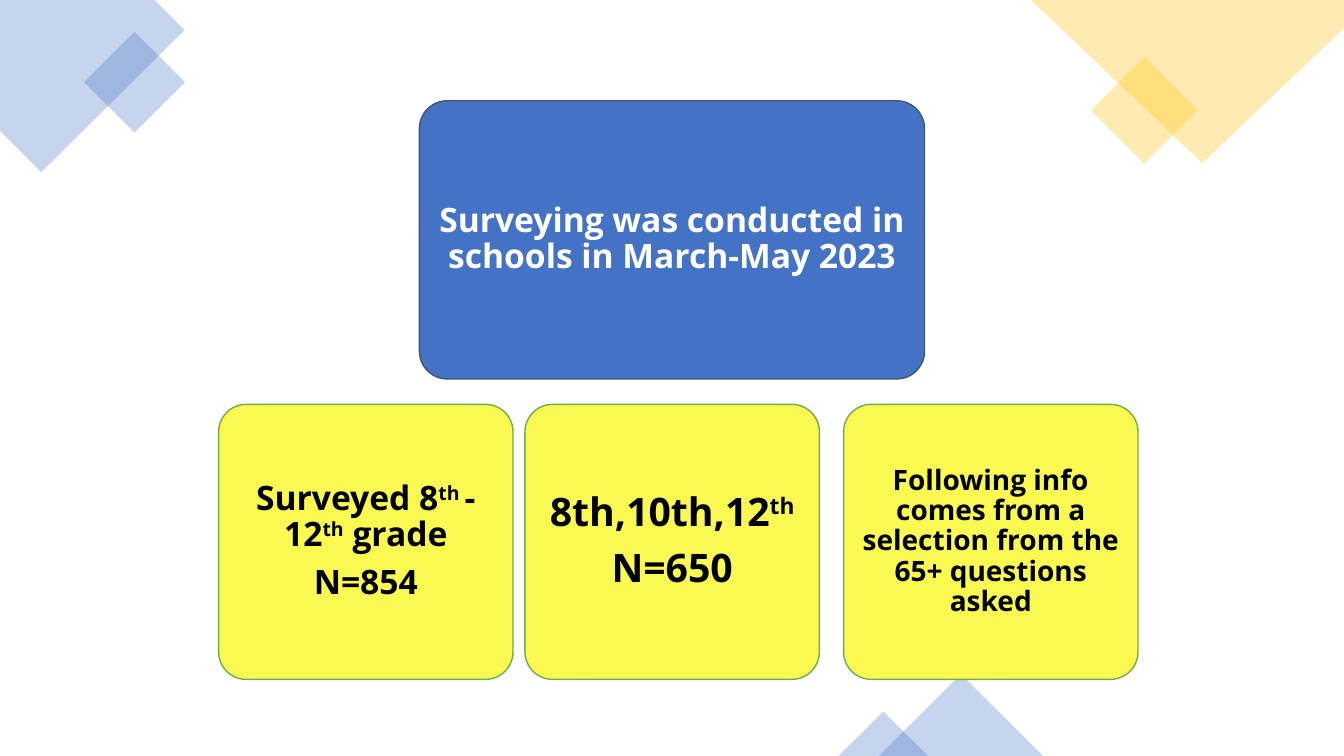
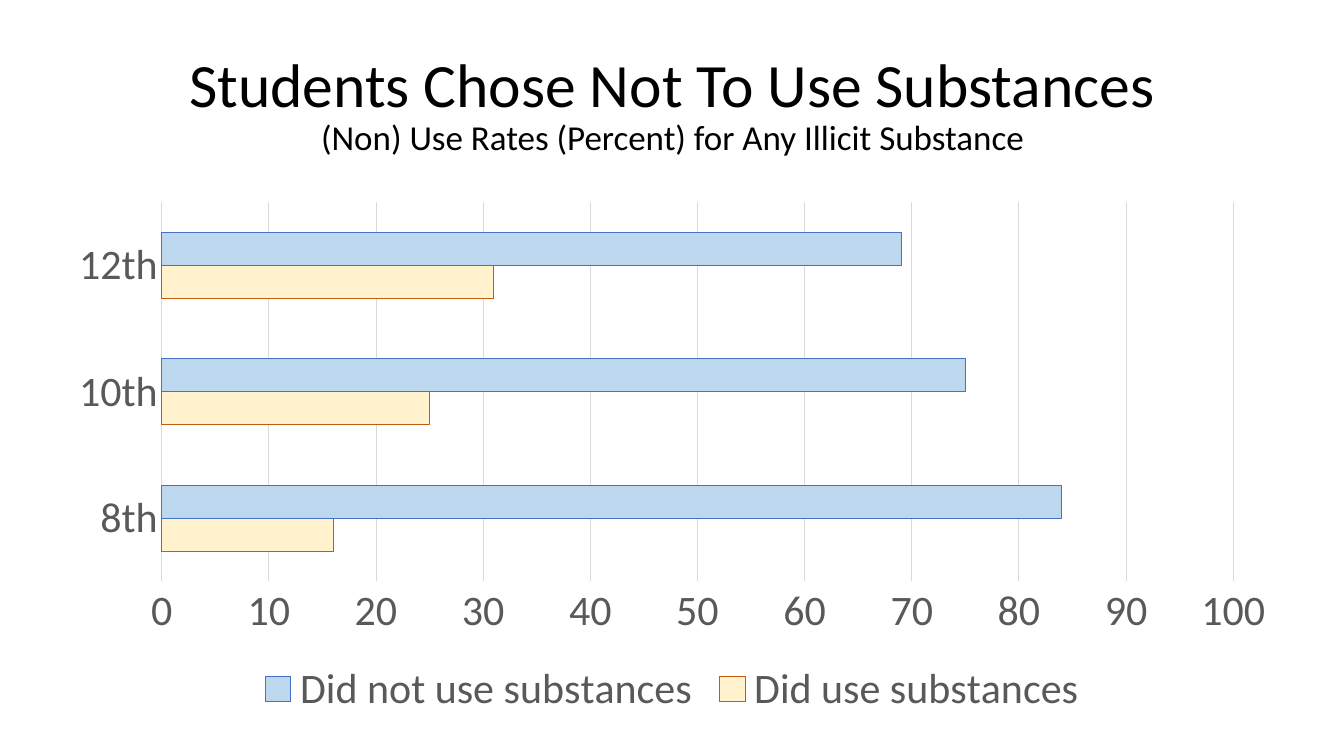
"""Build two slides on a school substance-use survey."""
import lxml.etree
import pptx
import pptx.chart.data
import pptx.dml.color
import pptx.enum.chart
import pptx.enum.shapes
import pptx.enum.text
import pptx.oxml.ns
import pptx.util

Cm = pptx.util.Cm
Pt = pptx.util.Pt
SHAPE = pptx.enum.shapes.MSO_SHAPE
BLUE = "4472C4"
GOLD = "FFC000"
YELLOW = "F9F951"
BLACK = "000000"
WHITE = "FFFFFF"
GREY_TEXT = "595959"
GREY_LINE = "D9D9D9"


def color(hex_string):
    return pptx.dml.color.RGBColor.from_string(hex_string)


def write(paragraph, text, size, font="Calibri", ink=BLACK, bold=False, space_after=0):
    paragraph.alignment = pptx.enum.text.PP_ALIGN.CENTER
    paragraph.line_spacing = 0.9
    paragraph.space_after = Pt(space_after)
    for index, piece in enumerate(text.split("^")):
        run = paragraph.add_run()
        run.text = piece
        run.font.name = font
        run.font.size = Pt(size)
        run.font.bold = bold
        run.font.color.rgb = color(ink)
        if index % 2:
            run._r.get_or_add_rPr().set("baseline", "30000")


presentation = pptx.Presentation()
presentation.slide_width = Cm(33.87)
presentation.slide_height = Cm(19.05)

slide = presentation.slides.add_slide(presentation.slide_layouts[6])
decorations = []
corners = [
    (BLUE, [(3.89, 0), (0, 0), (0, 3.3), (1.04, 4.34), (4.65, 0.76)]),
    (GOLD, [(33.87, 0), (25.98, 0), (30.3, 4.11), (33.87, 0.71)]),
]
for fill, points in corners:
    start, *rest = [(Cm(x), Cm(y)) for x, y in points]
    builder = slide.shapes.build_freeform(*start)
    builder.add_line_segments(rest, close=True)
    decorations.append((builder.convert_to_shape(), fill))

accents = [
    (SHAPE.RECTANGLE, BLUE, 315, 2.49, 1.17, 1.8, 1.8),
    (SHAPE.RECTANGLE, GOLD, 315, 27.89, 1.83, 1.9, 1.9),
    (SHAPE.ISOSCELES_TRIANGLE, BLUE, 0, 22.15, 16.99, 4.14, 2.06),
    (SHAPE.ISOSCELES_TRIANGLE, BLUE, 0, 21.13, 17.93, 2.26, 1.12),
]
for kind, fill, rotation, *box in accents:
    shape = slide.shapes.add_shape(kind, *map(Cm, box))
    shape.rotation = rotation
    decorations.append((shape, fill))

for shape, fill in decorations:
    shape.shadow.inherit = False
    shape.line.fill.background()
    shape.fill.solid()
    shape.fill.fore_color.rgb = color(fill)
    fill_color = shape._element.spPr.find(".//" + pptx.oxml.ns.qn("a:srgbClr"))
    lxml.etree.SubElement(fill_color, pptx.oxml.ns.qn("a:alpha"), val="30000")

small_card = (10.19, 7.42, 6.93)
cards = [
    ((10.57, 2.54, 12.73, 7.01), BLUE, "44546A", WHITE, 24,
     ["Surveying was conducted in schools in March-May 2023"]),
    ((5.51, *small_card), YELLOW, "70AD47", BLACK, 24,
     ["Surveyed 8^th ^- 12^th^ grade", "N=854"]),
    ((13.23, *small_card), YELLOW, "70AD47", BLACK, 28,
     ["8th,10th,12^th", "N=650"]),
    ((21.26, *small_card), YELLOW, "70AD47", BLACK, 20,
     ["Following info comes from a selection from the 65+ questions asked"]),
]
for box, fill, outline, ink, size, lines in cards:
    card = slide.shapes.add_shape(SHAPE.ROUNDED_RECTANGLE, *map(Cm, box))
    card.adjustments[0] = 0.1
    card.shadow.inherit = False
    card.fill.solid()
    card.fill.fore_color.rgb = color(fill)
    card.line.color.rgb = color(outline)
    card.line.width = Pt(1)
    frame = card.text_frame
    frame.word_wrap = True
    frame.vertical_anchor = pptx.enum.text.MSO_ANCHOR.MIDDLE
    inset = Pt(size * 0.3)
    frame.margin_left = frame.margin_right = inset
    frame.margin_top = frame.margin_bottom = inset
    for index, line in enumerate(lines):
        paragraph = frame.add_paragraph() if index else frame.paragraphs[0]
        write(paragraph, line, size, font="Open Sans", ink=ink, bold=True,
              space_after=size * 0.35)

slide = presentation.slides.add_slide(presentation.slide_layouts[5])
title = slide.shapes.title
title.left, title.top, title.width, title.height = map(Cm, (2.34, 0.84, 29.21, 3.68))
title.text_frame.word_wrap = True
title.text_frame.vertical_anchor = pptx.enum.text.MSO_ANCHOR.MIDDLE
paragraph = title.text_frame.paragraphs[0]
write(paragraph, "Students Chose Not To Use Substances", 44)
paragraph.add_line_break()
write(paragraph, "(Non) Use Rates (Percent) for Any Illicit Substance", 25)

series_rows = [
    ("Did use substances", (16, 25, 31), "FFF2CC", "C55A11"),
    ("Did not use substances", (84, 75, 69), "BDD7EE", BLUE),
]
chart_data = pptx.chart.data.CategoryChartData()
chart_data.categories = ["8th", "10th", "12th"]
for name, values, fill, outline in series_rows:
    chart_data.add_series(name, values)
chart = slide.shapes.add_chart(
    pptx.enum.chart.XL_CHART_TYPE.BAR_CLUSTERED,
    *map(Cm, (1.37, 4.83, 31.14, 13.39)), chart_data).chart
chart.has_title = False
chart.has_legend = True
chart.legend.position = pptx.enum.chart.XL_LEGEND_POSITION.BOTTOM
chart.legend.include_in_layout = False

plot = chart.plots[0]
plot.gap_width = 182
plot.vary_by_categories = False
for series, (name, values, fill, outline) in zip(plot.series, series_rows):
    series.format.fill.solid()
    series.format.fill.fore_color.rgb = color(fill)
    series.format.line.color.rgb = color(outline)
    series.format.line.width = Pt(0.75)

category_axis, value_axis = chart.category_axis, chart.value_axis
for axis in (category_axis, value_axis):
    axis.major_tick_mark = pptx.enum.chart.XL_TICK_MARK.NONE
    axis.minor_tick_mark = pptx.enum.chart.XL_TICK_MARK.NONE
value_axis.minimum_scale = 0
value_axis.maximum_scale = 100
value_axis.major_unit = 10
value_axis.has_major_gridlines = True
value_axis.format.line.fill.background()
for line in (category_axis.format.line, value_axis.major_gridlines.format.line):
    line.color.rgb = color(GREY_LINE)
    line.width = Pt(0.75)
for font in (chart.font, category_axis.tick_labels.font,
             value_axis.tick_labels.font, chart.legend.font):
    font.name = "Calibri"
    font.size = Pt(30)
    font.color.rgb = color(GREY_TEXT)

presentation.save("out.pptx")
